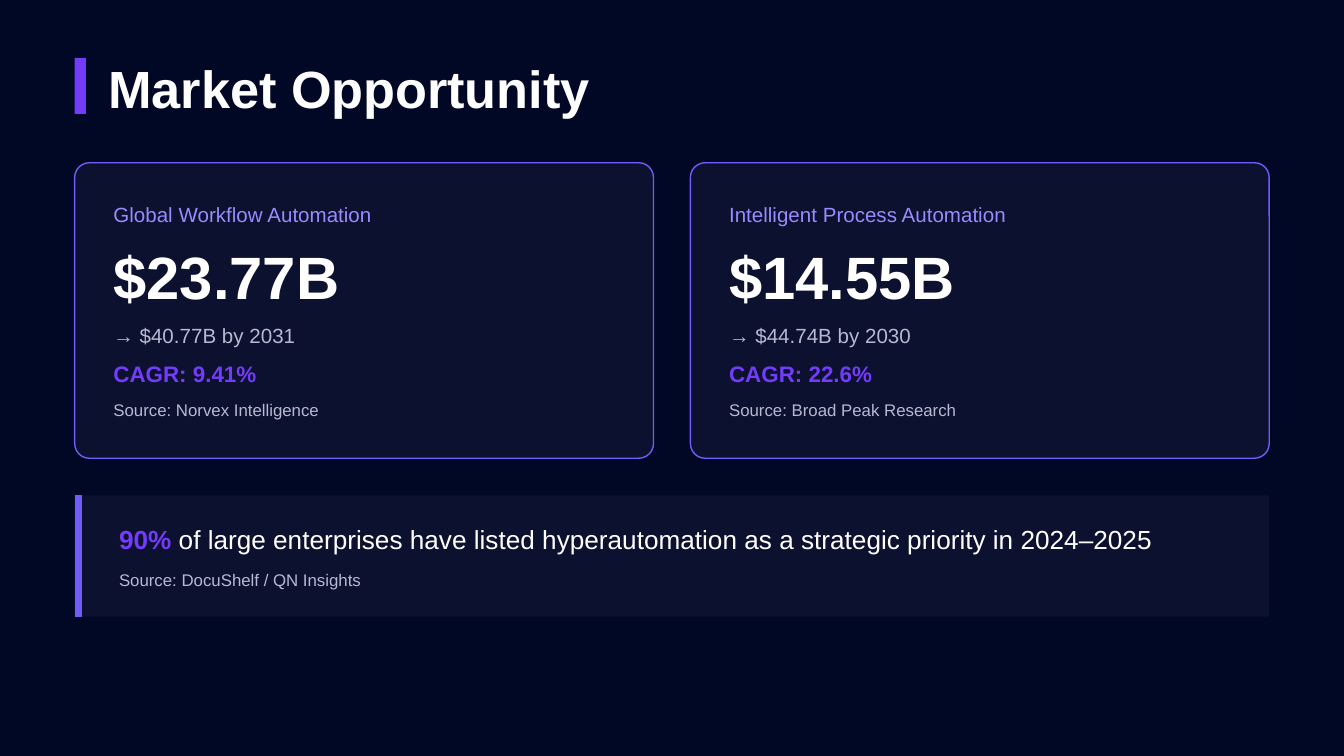
import pptx
import pptx.util
import pptx.dml.color
import pptx.enum.shapes
import pptx.oxml.ns
import lxml.etree

W, H = 10, 5.625
NIGHT, PANEL, WHITE, GREY = "010825", "0D1130", "FFFFFF", "B8B8D1"
VIOLET, EDGE, LILAC = "733CFA", "715CF7", "9A8AFF"
SHAPES = pptx.enum.shapes.MSO_SHAPE


def rgb(value):
    """Turn a hex string into a colour."""
    return pptx.dml.color.RGBColor.from_string(value)


def place(x, y, w, h):
    """Turn percentages of the slide's size into lengths."""
    return [pptx.util.Inches(v * side / 100) for v, side in zip((x, y, w, h), (W, H, W, H))]


def add_panel(s, kind, box, fill, edge=None):
    """Add a filled shape, outlined when an edge colour is given."""
    sp = s.shapes.add_shape(kind, *place(*box))
    sp.shadow.inherit = False
    sp.fill.solid()
    sp.fill.fore_color.rgb = rgb(fill)
    if edge:
        sp.line.color.rgb = rgb(edge)
        sp.line.width = pptx.util.Pt(0.75)
    else:
        sp.line.fill.background()
    return sp


def add_text(s, box, size, *runs):
    """Add one line of text from (text, colour, bold) runs."""
    tf = s.shapes.add_textbox(*place(*box)).text_frame
    tf.word_wrap = True
    tf.margin_left = tf.margin_right = tf.margin_top = tf.margin_bottom = 0
    p = tf.paragraphs[0]
    for text, color, bold in runs:
        r = p.add_run()
        r.text = text
        r.font.name = "Arial"
        r.font.size = pptx.util.Pt(size)
        r.font.bold = bold
        r.font.color.rgb = rgb(color)


def add_title(s, box, text):
    """Add the slide title with its accent bar."""
    x, y, w, h = box
    add_panel(s, SHAPES.RECTANGLE, (x, y, 0.83, h), VIOLET)
    add_text(s, (x + 2.5, y - 0.18, w - 2.5, 8), 28, (text, WHITE, True))


def add_market_card(s, box, market, value, forecast, growth, source):
    """Add a rounded card with the figures of one market."""
    x, y, w, h = box
    add_panel(s, SHAPES.ROUNDED_RECTANGLE, box, PANEL, EDGE).adjustments[0] = 0.05
    lines = [
        (5.16, 3.02, 11, market, LILAC, False),
        (10.14, 9.07, 32, value, WHITE, True),
        (21.15, 3.02, 11, forecast, GREY, False),
        (26.13, 3.38, 12, growth, VIOLET, True),
        (31.4, 2.67, 9, source, GREY, False),
    ]
    for dy, height, size, text, color, bold in lines:
        add_text(s, (x + 2.88, y + dy, w - 5.1, height), size, (text, color, bold))


def add_callout(s, box, figure, statement, source):
    """Add the callout band with a thick line on its left."""
    x, y, w, h = box
    add_panel(s, SHAPES.RECTANGLE, box, PANEL)
    left, top, _, height = place(x + 0.25, y, w, h)
    line = s.shapes.add_connector(
        pptx.enum.shapes.MSO_CONNECTOR.STRAIGHT, left, top, left, top + height)
    line.line.color.rgb = rgb(EDGE)
    line.line.width = pptx.util.Pt(3.75)
    lxml.etree.SubElement(line._element.spPr, pptx.oxml.ns.qn("a:effectLst"))
    add_text(s, (x + 3.3, y + 3.76, w - 4.4, 4.09), 14,
             (figure, VIOLET, True), (statement, WHITE, False))
    add_text(s, (x + 3.3, y + 9.8, w - 4.4, 2.67), 9, (source, GREY, False))


def main():
    """Build the market slide and save it."""
    prs = pptx.Presentation()
    prs.slide_width, prs.slide_height = pptx.util.Inches(W), pptx.util.Inches(H)
    s = prs.slides.add_slide(prs.slide_layouts[6])
    s.background.fill.solid()
    s.background.fill.fore_color.rgb = rgb(NIGHT)

    margin, gap = 5.56, 2.74
    width = 100 - 2 * margin
    card = (width - gap) / 2
    add_title(s, (margin, 7.65, 39.1, 7.41), "Market Opportunity")
    markets = [
        ("Global Workflow Automation", "$23.77B", "→ $40.77B by 2031",
         "CAGR: 9.41%", "Source: Norvex Intelligence"),
        ("Intelligent Process Automation", "$14.55B", "→ $44.74B by 2030",
         "CAGR: 22.6%", "Source: Broad Peak Research"),
    ]
    for i, market in enumerate(markets):
        add_market_card(s, (margin + i * (card + gap), 21.53, card, 39.1), *market)
    add_callout(s, (margin, 65.53, width, 16.05), "90%",
                " of large enterprises have listed hyperautomation"
                " as a strategic priority in 2024–2025",
                "Source: DocuShelf / QN Insights")
    prs.save("out.pptx")


if __name__ == "__main__":
    main()
